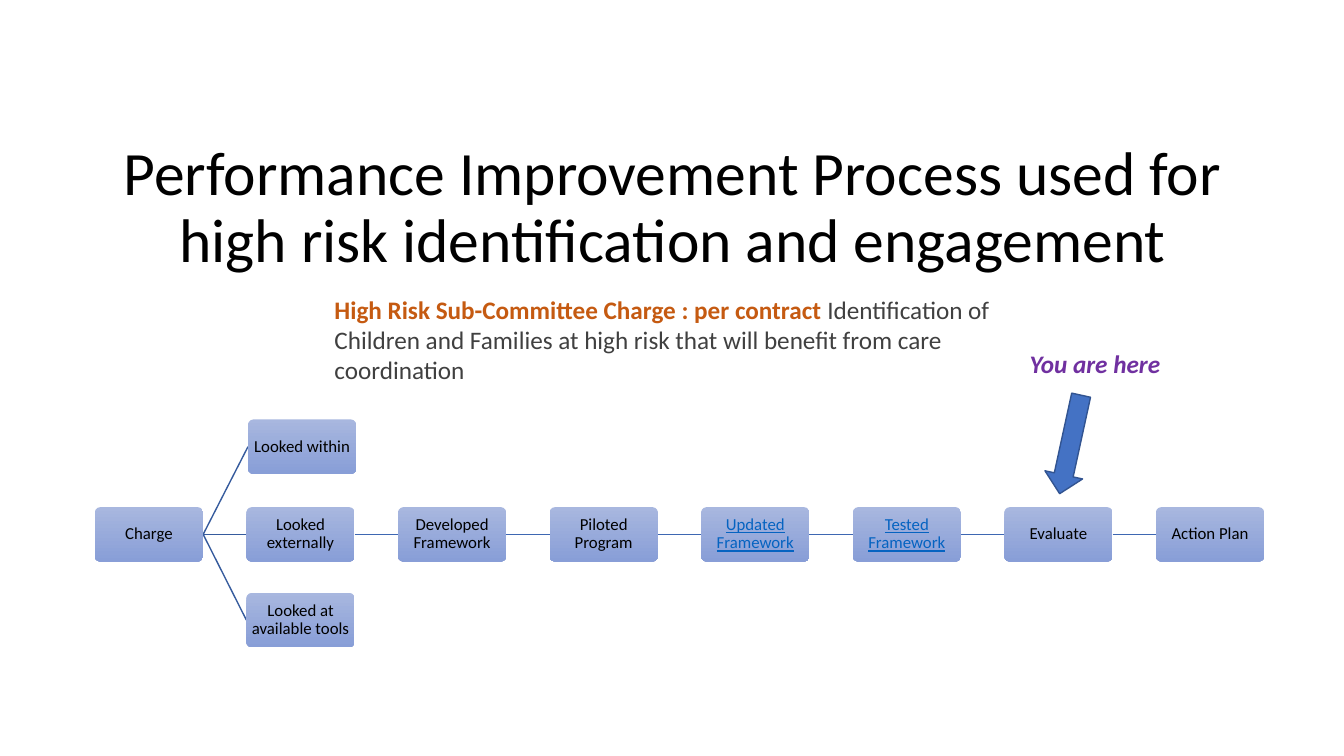
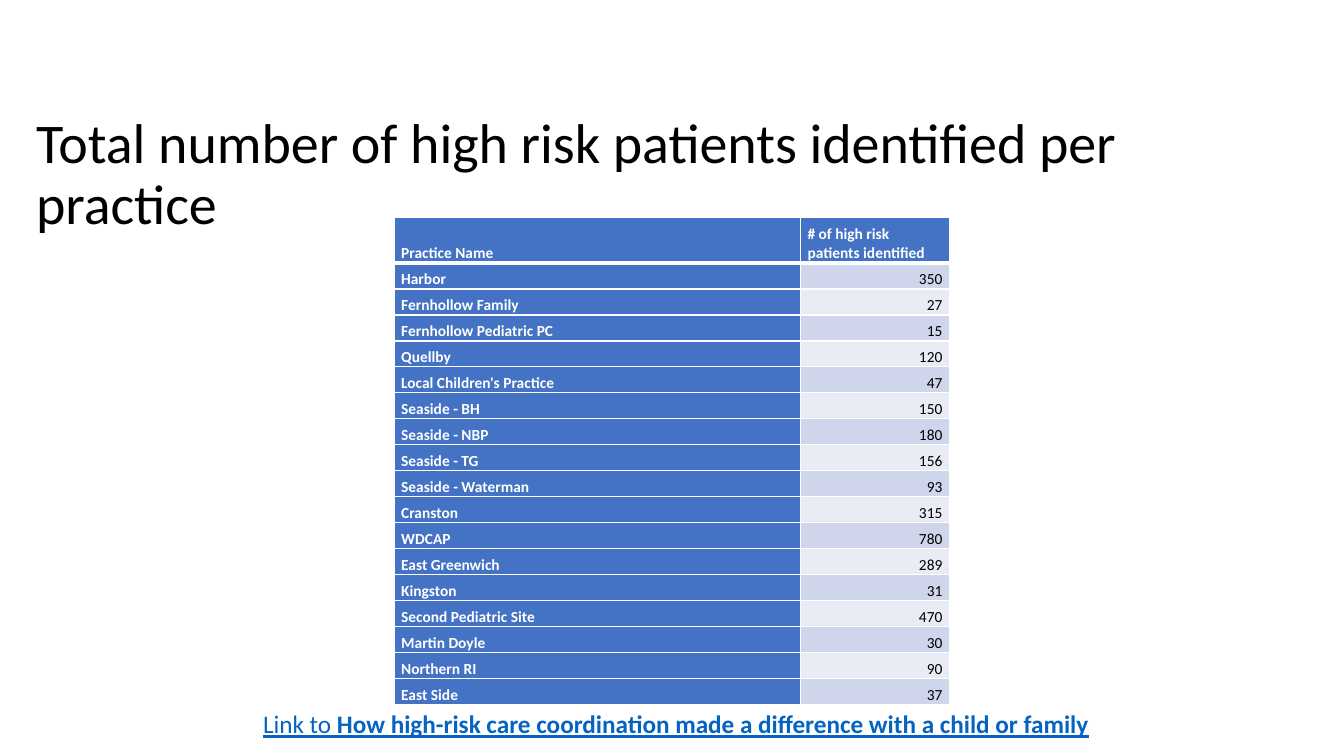
from collections import namedtuple

from lxml.etree import SubElement
from pptx import Presentation
from pptx.dml.color import RGBColor
from pptx.enum.shapes import MSO_CONNECTOR, MSO_SHAPE
from pptx.enum.text import MSO_ANCHOR, PP_ALIGN
from pptx.oxml import parse_xml
from pptx.oxml.ns import nsdecls, qn
from pptx.util import Cm, Pt

Box = namedtuple("Box", "left top width height")
Step = namedtuple("Step", "text column row nudge linked", defaults=(0, False))

FONT = "Calibri"
BLACK, WHITE = "000000", "FFFFFF"
BLUE, LINK = "4472C4", "0563C1"
STEP_TOP, STEP_BOTTOM = "A8B7DF", "889ED7"
BRANCH_LINE, CHAIN_LINE, ARROW_LINE = "365B9D", "3E67B2", "325491"
CHARGE_ORANGE, BODY_GREY, MARKER_PURPLE = "C55A11", "404040", "7030A0"
BANDS = ("CFD5EA", "E9EBF5")

STEP_WIDTH, STEP_HEIGHT, COLUMN_PITCH = 2.73, 1.37, 3.82
ROW_TOPS = (0, 2.21, 4.37)
CHARGE = Step("Charge", 0, 1)
BRANCHES = (
    Step("Looked within", 1, 0, 0.04),
    Step("Looked externally", 1, 1),
    Step("Looked at available tools", 1, 2),
)
CHAIN = (
    Step("Developed Framework", 2, 1),
    Step("Piloted Program", 3, 1),
    Step("Updated Framework", 4, 1, linked=True),
    Step("Tested Framework", 5, 1, linked=True),
    Step("Evaluate", 6, 1),
    Step("Action Plan", 7, 1),
)

HEADINGS = ("Practice Name", "# of high risk patients identified")
PRACTICES = (
    ("Harbor", 350),
    ("Fernhollow Family", 27),
    ("Fernhollow Pediatric PC", 15),
    ("Quellby", 120),
    ("Local Children's Practice", 47),
    ("Seaside - BH", 150),
    ("Seaside - NBP", 180),
    ("Seaside - TG", 156),
    ("Seaside - Waterman", 93),
    ("Cranston", 315),
    ("WDCAP", 780),
    ("East Greenwich", 289),
    ("Kingston", 31),
    ("Second Pediatric Site", 470),
    ("Martin Doyle", 30),
    ("Northern RI", 90),
    ("East Side", 37),
)


def rgb(value):
    return RGBColor.from_string(value)


def lengths(box):
    return [Cm(value) for value in box]


def add_run(paragraph, text, size, color, bold=False, italic=False, underline=False):
    run = paragraph.add_run()
    run.text = text
    font = run.font
    font.name, font.size = FONT, Pt(size)
    font.color.rgb = rgb(color)
    font.bold, font.italic, font.underline = bold, italic, underline


def add_text(slide, box, wrap=True, anchor=MSO_ANCHOR.TOP):
    frame = slide.shapes.add_textbox(*lengths(box)).text_frame
    frame.word_wrap = wrap
    frame.vertical_anchor = anchor
    return frame.paragraphs[0]


def add_title(slide, box, text, size, align):
    paragraph = add_text(slide, box, anchor=MSO_ANCHOR.MIDDLE)
    paragraph.alignment = align
    paragraph.line_spacing = 0.9
    add_run(paragraph, text, size, BLACK)


def step_box(area, step):
    left = area.left + step.column * COLUMN_PITCH + step.nudge
    return Box(left, area.top + ROW_TOPS[step.row], STEP_WIDTH, STEP_HEIGHT)


def add_step(slide, area, step):
    card = slide.shapes.add_shape(
        MSO_SHAPE.ROUNDED_RECTANGLE, *lengths(step_box(area, step)))
    card.adjustments[0] = 0.1
    card.shadow.inherit = False
    card.line.fill.background()
    card.fill.gradient()
    card.fill.gradient_angle = 270
    for stop, color in zip(card.fill.gradient_stops, (STEP_TOP, STEP_BOTTOM)):
        stop.color.rgb = rgb(color)
    frame = card.text_frame
    frame.word_wrap = True
    frame.vertical_anchor = MSO_ANCHOR.MIDDLE
    frame.margin_left = frame.margin_right = Cm(0.03)
    frame.margin_top = frame.margin_bottom = Cm(0.03)
    label = frame.paragraphs[0]
    label.alignment = PP_ALIGN.CENTER
    label.line_spacing = 0.9
    add_run(label, step.text, 12, LINK if step.linked else BLACK,
            underline=step.linked)


def add_link_line(slide, area, source, target, color):
    start, end = step_box(area, source), step_box(area, target)
    line = slide.shapes.add_connector(
        MSO_CONNECTOR.STRAIGHT,
        Cm(start.left + start.width), Cm(start.top + start.height / 2),
        Cm(end.left), Cm(end.top + end.height / 2))
    line.line.color.rgb = rgb(color)
    line.line.width = Pt(1)
    SubElement(line._element.spPr, qn("a:effectLst"))


def add_process(slide, area):
    for branch in BRANCHES:
        add_link_line(slide, area, CHARGE, branch, BRANCH_LINE)
    main_path = (BRANCHES[1], *CHAIN)
    for source, target in zip(main_path, main_path[1:]):
        add_link_line(slide, area, source, target, CHAIN_LINE)
    for step in (CHARGE, *BRANCHES, *CHAIN):
        add_step(slide, area, step)


def add_marker(slide, area):
    arrow = slide.shapes.add_shape(
        MSO_SHAPE.DOWN_ARROW,
        *lengths(Box(area.left + 0.79, area.top + 1.27, 0.97, 2.54)))
    arrow.rotation = 12.3
    arrow.shadow.inherit = False
    arrow.fill.solid()
    arrow.fill.fore_color.rgb = rgb(BLUE)
    arrow.line.color.rgb = rgb(ARROW_LINE)
    arrow.line.width = Pt(1)
    caption = add_text(slide, Box(area.left, area.top, area.width, 1.03), wrap=False)
    add_run(caption, "You are here", 18, MARKER_PURPLE, bold=True, italic=True)


def set_borders(cell, widths):
    properties = cell._tc.get_or_add_tcPr()
    for index, (side, width) in enumerate(zip("LRTB", widths)):
        properties.insert(index, parse_xml(
            f'<a:ln{side} {nsdecls("a")} w="{Pt(width)}"><a:solidFill>'
            f'<a:srgbClr val="{WHITE}"/></a:solidFill></a:ln{side}>'))


def fill_cell(cell, text, fill, color, bold, align, borders):
    cell.fill.solid()
    cell.fill.fore_color.rgb = rgb(fill)
    cell.margin_left = cell.margin_right = Cm(0.18)
    cell.margin_top = cell.margin_bottom = 0
    cell.vertical_anchor = MSO_ANCHOR.BOTTOM
    paragraph = cell.text_frame.paragraphs[0]
    paragraph.alignment = align
    add_run(paragraph, text, 11, color, bold)
    set_borders(cell, borders)


def add_practices(slide, area):
    table = slide.shapes.add_table(
        len(PRACTICES) + 1, len(HEADINGS), *lengths(area)).table
    count_width, heading_height = 3.76, 1.14
    table.columns[0].width = Cm(area.width - count_width)
    table.columns[1].width = Cm(count_width)
    table.rows[0].height = Cm(heading_height)
    for column, heading in enumerate(HEADINGS):
        fill_cell(table.cell(0, column), heading, BLUE, WHITE, True,
                  PP_ALIGN.LEFT, (1, 1, 1, 3))
    for row, (practice, patients) in enumerate(PRACTICES, 1):
        table.rows[row].height = Cm((area.height - heading_height) / len(PRACTICES))
        borders = (1, 1, 3 if row == 1 else 1, 1)
        fill_cell(table.cell(row, 0), practice, BLUE, WHITE, True,
                  PP_ALIGN.LEFT, borders)
        fill_cell(table.cell(row, 1), str(patients), BANDS[(row - 1) % 2], BLACK,
                  False, PP_ALIGN.RIGHT, borders)


def build_process_slide(slide):
    add_title(slide, Box(2.36, 3.43, 29.21, 3.68),
              "Performance Improvement Process used for high risk "
              "identification and engagement", 44, PP_ALIGN.CENTER)
    charge = add_text(slide, Box(8.18, 7.29, 19.1, 2.57))
    add_run(charge, "High Risk Sub-Committee Charge : per contract ", 18,
            CHARGE_ORANGE, bold=True)
    add_run(charge, "Identification of Children and Families at high risk that "
            "will benefit from care coordination", 18, BODY_GREY)
    add_process(slide, Box(2.39, 10.57, 29.47, 5.74))
    add_marker(slide, Box(25.7, 8.66, 3.84, 3.81))


def build_practice_slide(slide):
    add_title(slide, Box(0.66, 2.59, 32.54, 3.68),
              "Total number of high risk patients identified per practice",
              40, PP_ALIGN.LEFT)
    add_practices(slide, Box(9.93, 5.49, 14, 12.27))
    story = add_text(slide, Box(6.38, 17.73, 21.54, 1.03), wrap=False)
    add_run(story, "Link to ", 18, LINK, underline=True)
    add_run(story, "How high-risk care coordination made a difference with a "
            "child or family", 18, LINK, bold=True, underline=True)


def main():
    deck = Presentation()
    deck.slide_width, deck.slide_height = Cm(33.87), Cm(19.05)
    blank = deck.slide_layouts[6]
    for build in (build_process_slide, build_practice_slide):
        build(deck.slides.add_slide(blank))
    deck.save("out.pptx")


if __name__ == "__main__":
    main()
